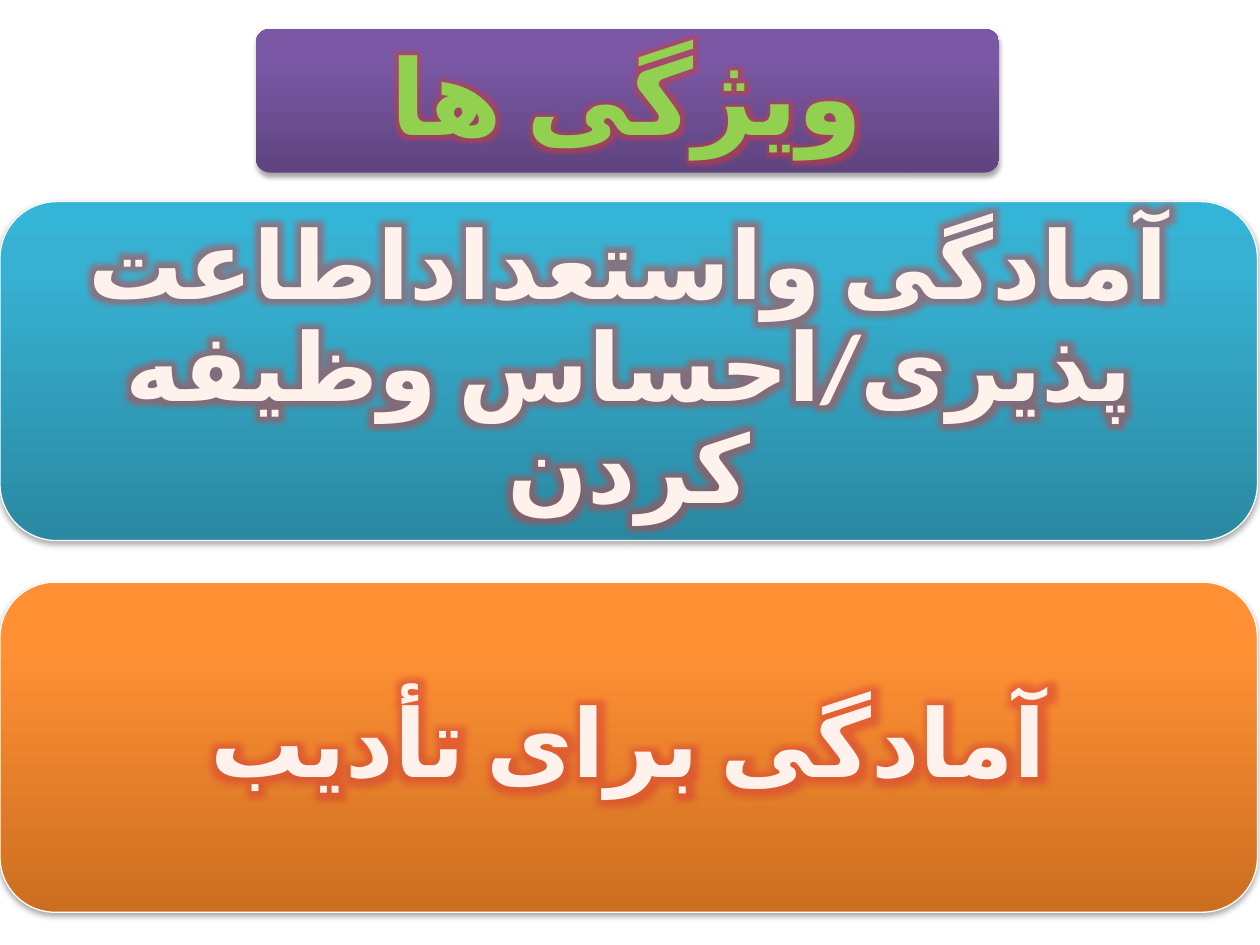
from dataclasses import dataclass

from lxml.etree import SubElement
from pptx import Presentation
from pptx.dml.color import RGBColor
from pptx.enum.shapes import MSO_SHAPE
from pptx.enum.text import MSO_ANCHOR, PP_ALIGN
from pptx.oxml import parse_xml
from pptx.oxml.ns import nsdecls, qn
from pptx.util import Inches, Pt


@dataclass(frozen=True)
class Theme:
    font: str = "Calibri"
    language: str = "fa-IR"
    title_size: int = 60
    body_size: int = 54
    title_text: str = "92D050"
    body_text: str = "FFF2ED"
    outline: str = "EB6A00"
    border: str = "FFFFFF"
    glow: str = "D53A35"
    # Gradients run from the bottom edge to the top edge
    purple: tuple = ("5F4480", "7B58A6", "7C57A8")
    blue: tuple = ("2A88A2", "37B1D2", "34B4D6")
    orange: tuple = ("CC6E20", "FF9034", "FF9136")


def gradient_xml(colors):
    stops = "".join(
        f'<a:gs pos="{position}000"><a:srgbClr val="{color}"/></a:gs>'
        for position, color in zip((0, 80, 100), colors)
    )
    return parse_xml(
        f'<a:gradFill {nsdecls("a")} rotWithShape="1"><a:gsLst>{stops}</a:gsLst>'
        '<a:lin ang="16200000" scaled="0"/></a:gradFill>'
    )


def shadow_xml():
    return parse_xml(
        f'<a:effectLst {nsdecls("a")}><a:outerShdw blurRad="{Pt(3.1)}" '
        f'dist="{Pt(1.8)}" dir="5400000" rotWithShape="0"><a:srgbClr val="000000">'
        '<a:alpha val="35000"/></a:srgbClr></a:outerShdw></a:effectLst>'
    )


def glow_xml(color, radius):
    return parse_xml(
        f'<a:effectLst {nsdecls("a")}><a:glow rad="{Pt(radius)}">'
        f'<a:srgbClr val="{color}"><a:alpha val="50000"/></a:srgbClr>'
        '</a:glow></a:effectLst>'
    )


def outline_xml(color, width):
    return parse_xml(
        f'<a:ln {nsdecls("a")} w="{Pt(width)}"><a:solidFill>'
        f'<a:srgbClr val="{color}"/></a:solidFill></a:ln>'
    )


class SlideBuilder:
    def __init__(self, page, theme):
        self.page = page
        self.theme = theme

    def panel(self, group, bounds, corner, colors, border):
        """Rounded panel with a gradient and a soft shadow."""
        panel = group.shapes.add_shape(
            MSO_SHAPE.ROUNDED_RECTANGLE, *map(Inches, bounds))
        panel.adjustments[0] = corner
        if border:
            panel.line.color.rgb = RGBColor.from_string(self.theme.border)
            panel.line.width = Pt(0.75)
        else:
            panel.line.fill.background()
        properties = panel.element.spPr
        properties.find(qn("a:prstGeom")).addnext(gradient_xml(colors))
        properties.append(shadow_xml())

    def label(self, group, bounds, margins, text, size, color, glow, outlined):
        """Centred right-to-left text with a glow."""
        box = group.shapes.add_textbox(*map(Inches, bounds))
        frame = box.text_frame
        frame.word_wrap = True
        frame.vertical_anchor = MSO_ANCHOR.MIDDLE
        frame.margin_left = frame.margin_right = Inches(margins[0])
        frame.margin_top = frame.margin_bottom = Inches(margins[1])

        para = frame.paragraphs[0]
        para.alignment = PP_ALIGN.CENTER
        para.line_spacing = 0.9
        para_properties = para._p.get_or_add_pPr()
        para_properties.set("rtl", "1")
        after = SubElement(para_properties, qn("a:spcAft"))
        SubElement(after, qn("a:spcPct")).set("val", "35000")

        span = para.add_run()
        span.text = text
        span.font.size = Pt(size)
        span.font.bold = True
        span.font.color.rgb = RGBColor.from_string(color)
        span.font.name = self.theme.font
        span_properties = span._r.get_or_add_rPr()
        span_properties.set("lang", self.theme.language)
        # Arabic script takes its typeface from the complex-script font
        SubElement(span_properties, qn("a:cs")).set("typeface", self.theme.font)
        fill = span_properties.find(qn("a:solidFill"))
        fill.addnext(glow_xml(self.theme.glow, glow))
        if outlined:
            fill.addprevious(outline_xml(self.theme.outline, 2.48))

    def title(self, text):
        group = self.page.shapes.add_group_shape()
        self.panel(group, (2.03, 0.23, 5.9, 1.14), 0.1, self.theme.purple, False)
        self.label(group, (2.06, 0.27, 5.83, 1.07), (0.12, 0.08), text,
                   self.theme.title_size, self.theme.title_text, 8, False)

    def card(self, top, height, colors, text):
        width, inset = 9.98, 0.13
        group = self.page.shapes.add_group_shape()
        self.panel(group, (0, top, width, height), 0.167, colors, True)
        inner = (inset, top + inset, width - 2 * inset, height - 2 * inset)
        self.label(group, inner, (0.42, 0.42), text,
                   self.theme.body_size, self.theme.body_text, 14, True)


def main():
    deck = Presentation()
    deck.slide_width, deck.slide_height = Inches(10), Inches(7.5)
    theme = Theme()
    builder = SlideBuilder(deck.slides.add_slide(deck.slide_layouts[6]), theme)

    # Heading
    builder.title("ویژگی ها")

    # Characteristics
    builder.card(1.6, 2.69, theme.blue,
                 "آمادگی واستعداداطاعت پذیری/احساس وظیفه کردن")
    builder.card(4.62, 2.62, theme.orange, "آمادگی برای تأدیب")

    deck.save("out.pptx")


if __name__ == "__main__":
    main()
